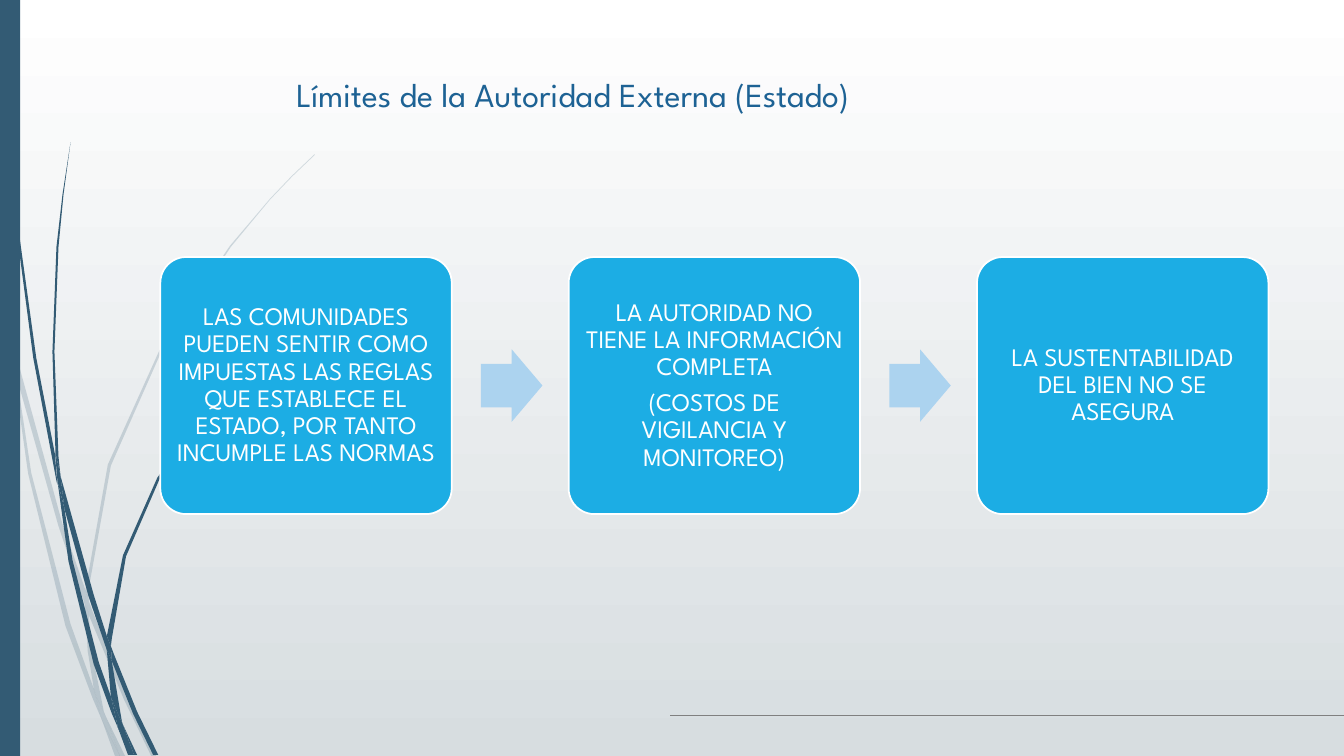
import pptx
import pptx.util
import pptx.dml.color
import pptx.enum.shapes
import pptx.enum.text
import pptx.oxml.ns
import pptx.oxml.xmlchemy
from pptx.util import Inches

COLORS = {
    "sky": "FFFFFF",
    "mist": "D7DDE0",
    "slate": "335B74",
    "rule": "808080",
    "title": "1D6294",
    "card": "1CADE4",
    "arrow": "ACD3EF",
    "white": "FFFFFF",
}
FONT = "League Spartan"

CARD_LEFT, CARD_TOP, CARD_WIDTH, CARD_HEIGHT = 1.59, 2.55, 2.89, 2.55
CARD_PITCH = 4.05
ARROW_OFFSET, ARROW_WIDTH, ARROW_HEIGHT = 3.18, 0.61, 0.72

CARDS = [
    ["LAS COMUNIDADES PUEDEN SENTIR COMO IMPUESTAS LAS REGLAS QUE ESTABLECE EL "
     "ESTADO, POR TANTO INCUMPLE LAS NORMAS"],
    ["LA AUTORIDAD NO TIENE LA INFORMACIÓN COMPLETA",
     "(COSTOS DE VIGILANCIA Y MONITOREO)"],
    ["LA SUSTENTABILIDAD DEL BIEN NO SE ASEGURA"],
]

# Outlines of the grass blades, in inches on the slide
PALE_BLADES = [
    [(0.11, 3.5), (0.09, 3.22), (0, 2.82), (0, 2.99), (0.1, 3.44)],
    [(0.58, 5.22), (0.84, 5.99), (0.85, 5.86), (0.62, 5.2), (0.14, 3.45), (0.17, 3.76)],
    [(0.92, 6.07), (0.88, 5.96), (0.88, 6.1), (1.23, 6.94), (1.5, 7.5), (1.55, 7.5),
     (1.27, 6.92)],
    [(1.19, 7.5), (1.24, 7.5), (1.05, 7.11)],
    [(0.93, 6.83), (0.7, 6.19), (0.31, 4.69), (0.17, 3.76), (0.11, 3.5), (0.28, 4.7),
     (0.65, 6.21), (0.92, 6.93), (1.01, 7.14), (0.99, 7.07)],
    [(0.84, 5.99), (0.87, 6.46), (0.93, 6.83), (0.96, 6.92), (1.05, 7.11), (1.03, 7.06),
     (0.91, 6.46), (0.88, 6.1), (0.88, 6.08)],
    [(0.88, 5.84), (1.1, 4.62), (1.6, 3.49), (2.29, 2.45), (2.68, 1.98), (2.9, 1.75),
     (3.12, 1.54), (3.12, 1.53), (2.89, 1.75), (2.68, 1.97), (2.28, 2.44), (1.58, 3.48),
     (1.07, 4.61), (0.85, 5.84), (0.85, 5.86), (0.88, 5.96)],
    [(1.01, 7.14), (1.14, 7.5), (1.19, 7.5)],
    [(0.88, 6.08), (0.88, 6.1), (0.88, 5.96), (0.85, 5.86), (0.84, 5.99)],
    [(0.96, 6.92), (0.93, 6.83), (0.99, 7.07), (1.01, 7.14), (1.19, 7.5), (1.05, 7.11)],
]
DARK_BLADES = [
    [(0.07, 1.1), (0.17, 2.33), (0.33, 3.55), (0.56, 4.77), (0.57, 4.81), (0.55, 4.57),
     (0.55, 4.53), (0.36, 3.55), (0.19, 2.32), (0.08, 1.09), (0.05, 0.48), (0.04, 0),
     (0.03, 0), (0.04, 0.48)],
    [(0.88, 5.92), (1.06, 6.45), (1.06, 6.33), (1.06, 6.31), (0.93, 5.9), (0.6, 4.72),
     (0.64, 5.05)],
    [(1.13, 6.49), (1.1, 6.41), (1.11, 6.56), (1.32, 7.08), (1.52, 7.49), (1.57, 7.49),
     (1.36, 7.06)],
    [(1.1, 6.91), (0.98, 6.57), (0.72, 5.56), (0.64, 5.05), (0.57, 4.77), (0.68, 5.57),
     (0.93, 6.59), (1.11, 7.08), (1.17, 7.22), (1.16, 7.17)],
    [(0.6, 4.72), (0.58, 4.53), (0.54, 3.49), (0.58, 2.45), (0.63, 1.93), (0.7, 1.41),
     (0.62, 1.93), (0.56, 2.45), (0.52, 3.49), (0.55, 4.49)],
    [(1.33, 7.49), (1.36, 7.49), (1.22, 7.19)],
    [(0.57, 4.77), (0.64, 5.05), (0.6, 4.72), (0.55, 4.49), (0.55, 4.53)],
    [(1.11, 6.33), (1.25, 5.52), (1.58, 4.76), (2.05, 4.06), (2.31, 3.74), (2.45, 3.59),
     (2.61, 3.44), (2.6, 3.44), (2.45, 3.58), (2.31, 3.73), (2.04, 4.05), (1.56, 4.74),
     (1.22, 5.51), (1.06, 6.31), (1.1, 6.41)],
    [(1.17, 7.22), (1.27, 7.49), (1.31, 7.49)],
    [(1.06, 6.45), (1.1, 6.91), (1.16, 7.06), (1.22, 7.19), (1.21, 7.16), (1.11, 6.56),
     (1.09, 6.51)],
    [(1.06, 6.45), (1.09, 6.51), (1.11, 6.56), (1.1, 6.41), (1.06, 6.31), (1.06, 6.33)],
    [(1.16, 7.06), (1.1, 6.91), (1.16, 7.17), (1.17, 7.22), (1.3, 7.49), (1.33, 7.49),
     (1.22, 7.19)],
]


def rgb(name):
    return pptx.dml.color.RGBColor.from_string(COLORS[name])


def paint(shape, color, opacity=100):
    """Give a shape a plain fill, no outline and no shadow."""
    shape.shadow.inherit = False
    shape.fill.solid()
    shape.fill.fore_color.rgb = rgb(color)
    shape.line.fill.background()
    if opacity < 100:
        tint = shape._element.spPr.find(".//" + pptx.oxml.ns.qn("a:srgbClr"))
        alpha = pptx.oxml.xmlchemy.OxmlElement("a:alpha")
        alpha.set("val", str(opacity * 1000))
        tint.append(alpha)


def add_block(slide, preset, left, top, width, height, color):
    block = slide.shapes.add_shape(
        preset, Inches(left), Inches(top), Inches(width), Inches(height))
    paint(block, color)
    return block


def add_blade(slide, outline, opacity):
    points = [(Inches(x), Inches(y)) for x, y in outline]
    builder = slide.shapes.build_freeform(*points[0])
    builder.add_line_segments(points[1:], close=True)
    paint(builder.convert_to_shape(), "slate", opacity)


def add_rule(slide, left, right, y):
    rule = slide.shapes.add_connector(
        pptx.enum.shapes.MSO_CONNECTOR.STRAIGHT,
        Inches(left), Inches(y), Inches(right), Inches(y))
    rule.line.color.rgb = rgb("rule")
    rule.line.width = pptx.util.Pt(0.75)
    rule._element.spPr.append(pptx.oxml.xmlchemy.OxmlElement("a:effectLst"))


def add_run(paragraph, text, size, color):
    run = paragraph.add_run()
    run.text = text
    run.font.name = FONT
    run.font.size = pptx.util.Pt(size)
    run.font.color.rgb = rgb(color)


def set_title(slide, text):
    title = slide.shapes.title
    title.left, title.top = Inches(2.84), Inches(0.68)
    title.width, title.height = Inches(9.75), Inches(1.4)
    title.text_frame.vertical_anchor = pptx.enum.text.MSO_ANCHOR.TOP
    heading = title.text_frame.paragraphs[0]
    heading.alignment = pptx.enum.text.PP_ALIGN.LEFT
    add_run(heading, text, 24, "title")


def add_card(slide, left, statements):
    card = add_block(slide, pptx.enum.shapes.MSO_SHAPE.ROUNDED_RECTANGLE,
                     left, CARD_TOP, CARD_WIDTH, CARD_HEIGHT, "card")
    card.adjustments[0] = 0.1
    card.line.color.rgb = rgb("white")
    card.line.width = pptx.util.Pt(1.25)
    frame = card.text_frame
    frame.word_wrap = True
    frame.vertical_anchor = pptx.enum.text.MSO_ANCHOR.MIDDLE
    frame.margin_left = frame.margin_right = Inches(0.07)
    frame.margin_top = frame.margin_bottom = Inches(0.07)
    for index, statement in enumerate(statements):
        paragraph = frame.add_paragraph() if index else frame.paragraphs[0]
        paragraph.alignment = pptx.enum.text.PP_ALIGN.CENTER
        paragraph.line_spacing = 0.9
        paragraph.space_after = pptx.util.Pt(6.3)
        add_run(paragraph, statement, 18, "white")


def add_arrow(slide, left):
    top = CARD_TOP + (CARD_HEIGHT - ARROW_HEIGHT) / 2
    arrow = add_block(slide, pptx.enum.shapes.MSO_SHAPE.RIGHT_ARROW,
                      left, top, ARROW_WIDTH, ARROW_HEIGHT, "arrow")
    arrow.adjustments[0] = 0.6
    arrow.adjustments[1] = 0.5


def set_background(slide):
    fill = slide.background.fill
    fill.gradient()
    fill.gradient_angle = 270
    for stop, color in zip(fill.gradient_stops, ("sky", "mist")):
        stop.color.rgb = rgb(color)


def main():
    deck = pptx.Presentation()
    deck.slide_width, deck.slide_height = Inches(13.33), Inches(7.5)
    slide = deck.slides.add_slide(deck.slide_layouts[5])

    # Backdrop: gradient, grass blades, side band and bottom rule
    set_background(slide)
    for blades, opacity in ((PALE_BLADES, 20), (DARK_BLADES, 100)):
        for outline in blades:
            add_blade(slide, outline, opacity)
    add_block(slide, pptx.enum.shapes.MSO_SHAPE.RECTANGLE, 0, 0, 0.2, 7.5, "slate")
    add_rule(slide, 6.65, 13.33, 7.1)

    # Title and the chain of cards
    set_title(slide, "Límites de la Autoridad Externa (Estado)")
    for index, statements in enumerate(CARDS):
        left = CARD_LEFT + index * CARD_PITCH
        add_card(slide, left, statements)
        if index < len(CARDS) - 1:
            add_arrow(slide, left + ARROW_OFFSET)

    deck.save("out.pptx")


if __name__ == "__main__":
    main()
